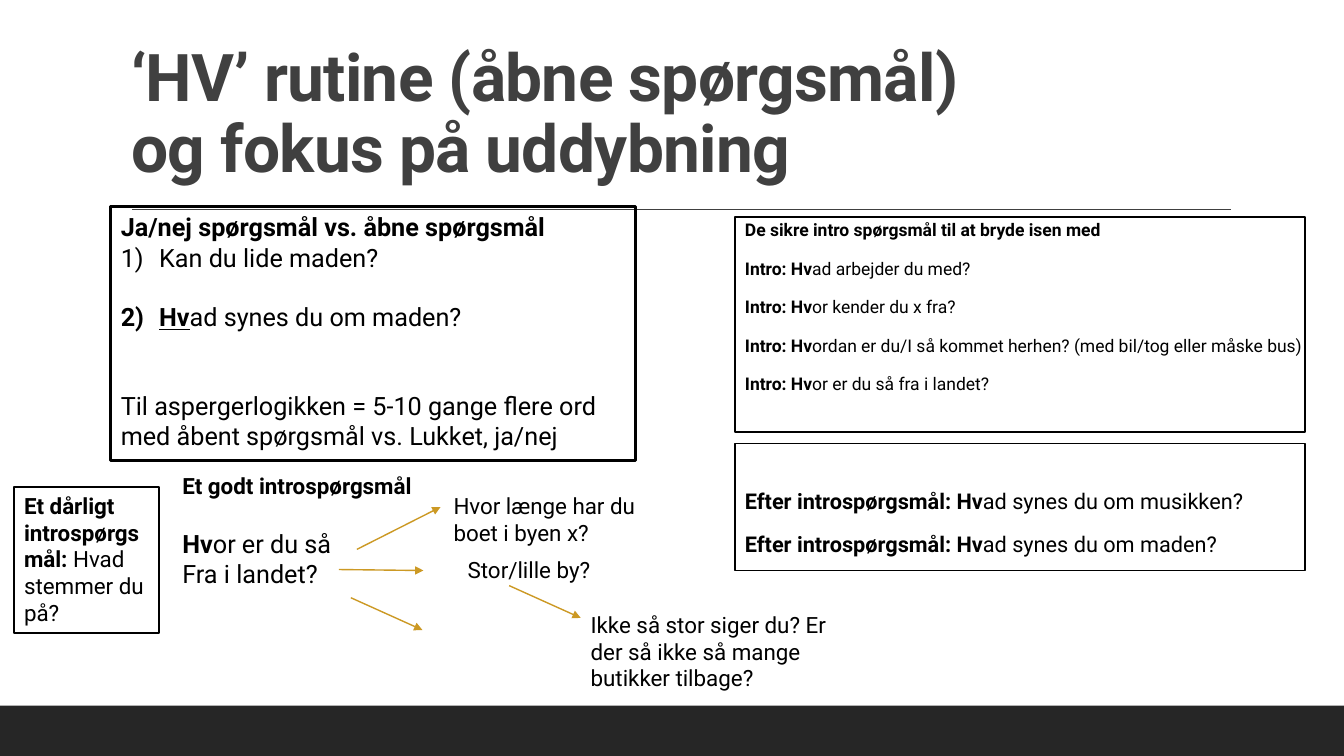
from lxml import etree
from pptx import Presentation
from pptx.dml.color import RGBColor
from pptx.enum import shapes, text
from pptx.oxml.ns import qn
from pptx.util import Inches, Pt

FONT = "Roboto"
BLACK = RGBColor(0, 0, 0)
WHITE = RGBColor(255, 255, 255)
GREY = RGBColor(0x40, 0x40, 0x40)
DARK = RGBColor(0x26, 0x26, 0x26)
GOLD = RGBColor(0xCC, 0x99, 0x24)

# Content: a paragraph is (bold text, plain text) or (bold, plain, own format)
TITLE = ["‘HV’ rutine (åbne spørgsmål)", "og fokus på uddybning"]
OPEN_QUESTIONS = [
    ("Ja/nej spørgsmål vs. åbne spørgsmål", ""),
    ("", "Kan du lide maden?", dict(number=True)),
    ("Hv", "ad synes du om maden?", dict(number=True, before=21, underline=True)),
    ("", "Til aspergerlogikken = 5-10 gange flere ord "
         "med åbent spørgsmål vs. Lukket, ja/nej", dict(before=42)),
]
INTRO = [("De sikre intro spørgsmål til at bryde isen med", "")] + [
    ("Intro: Hv", rest) for rest in (
        "ad arbejder du med?",
        "or kender du x fra?",
        "ordan er du/I så kommet herhen? (med bil/tog eller måske bus)",
        "or er du så fra i landet?")]
AFTER_INTRO = [("Efter introspørgsmål: Hv", f"ad synes du om {topic}?")
               for topic in ("musikken", "maden")]
GOOD = [("Et godt introspørgsmål", "", dict(size=16)),
        ("Hv", "or er du så", dict(before=21)),
        ("", "Fra i landet?")]
BAD = [("Et dårligt introspørgsmål: ", "Hvad stemmer du på?")]

# Place, paragraphs, outline width, fill, format
SPACED = dict(spacing=0.9, before=12, after=2)
BOXES = [
    ((7.29, 2.15, 5.65, 2.14), INTRO, 1.25, WHITE, dict(size=12.5, right=0, **SPACED)),
    ((1.1, 2.05, 5.2, 2.52), OPEN_QUESTIONS, 2.25, None, dict(size=18)),
    ((7.29, 4.4, 5.65, 1.26), AFTER_INTRO, 1.25, WHITE,
     dict(size=15.5, right=0, top=0.47, **SPACED)),
    ((0.14, 4.83, 1.44, 1.45), BAD, 1.25, WHITE, dict(size=16)),
]
LABELS = [
    ((1.71, 4.63, 4.82, 2.22), GOOD, 18),
    ((4.4, 4.83, 2.01, 0.64), [("", "Hvor længe har du boet i byen x?")], 16),
    ((4.54, 5.47, 2.01, 0.37), [("", "Stor/lille by?")], 16),
    ((5.76, 6.01, 2.66, 0.91),
     [("", "Ikke så stor siger du? Er der så ikke så mange butikker tilbage?")], 16),
]
ARROWS = [(3.54, 5.45, 4.37, 5.03), (3.36, 5.65, 4.2, 5.66),
          (3.48, 5.93, 4.19, 6.25), (5.05, 5.81, 5.76, 6.13)]


def add_run(p, words, size, color=BLACK, bold=False, underline=False):
    r = p.add_run()
    r.text = words
    f = r.font
    f.name, f.size, f.bold, f.color.rgb = FONT, Pt(size), bold, color
    if underline:
        f.underline = True
    return r


def write(tf, paragraphs, right=0.1, top=0.05, **shared):
    tf.word_wrap = True
    tf.vertical_anchor = text.MSO_ANCHOR.TOP
    tf.margin_right, tf.margin_top = Inches(right), Inches(top)
    for i, (strong, plain, *own) in enumerate(paragraphs):
        style = {**shared, **(own[0] if own else {})}
        p = tf.add_paragraph() if i else tf.paragraphs[0]
        p.alignment = text.PP_ALIGN.LEFT
        p.line_spacing = style.get("spacing", 1.0)
        p.space_before = Pt(style.get("before", 0))
        p.space_after = Pt(style.get("after", 0))
        if style.get("number"):
            pPr = p._p.get_or_add_pPr()
            pPr.set("marL", str(Inches(0.38)))
            pPr.set("indent", str(-Inches(0.38)))
            etree.SubElement(pPr, qn("a:buFont"), typeface="+mj-lt")
            etree.SubElement(pPr, qn("a:buAutoNum"), type="arabicParenR")
        if strong:
            add_run(p, strong, style["size"], bold=True,
                    underline=style.get("underline", False))
        if plain:
            add_run(p, plain, style["size"])


def add_box(s, place, fill=None, line=None):
    sp = s.shapes.add_shape(shapes.MSO_SHAPE.RECTANGLE, *map(Inches, place))
    sp.shadow.inherit = False
    if fill is None:
        sp.fill.background()
    else:
        sp.fill.solid()
        sp.fill.fore_color.rgb = fill
    if line is None:
        sp.line.fill.background()
    else:
        sp.line.color.rgb = BLACK
        sp.line.width = Pt(line)
    return sp


def add_line(s, ends, color, arrow=False):
    c = s.shapes.add_connector(shapes.MSO_CONNECTOR.STRAIGHT, *map(Inches, ends))
    c.line.color.rgb = color
    c.line.width = Pt(1)
    if arrow:
        etree.SubElement(c.line._get_or_add_ln(), qn("a:tailEnd"), type="triangle")
    etree.SubElement(c._element.spPr, qn("a:effectLst"))


def main():
    prs = Presentation()
    prs.slide_width, prs.slide_height = Inches(13.33), Inches(7.5)
    s = prs.slides.add_slide(prs.slide_layouts[5])

    # Footer band and title rule
    add_box(s, (0, 7, 13.33, 0.5), fill=DARK)
    add_line(s, (1.31, 2.08, 12.21, 2.08), GREY)

    # Title
    title = s.shapes.title
    title.left, title.top, title.width, title.height = map(Inches, (1.2, 0.31, 11, 1.59))
    tf = title.text_frame
    tf.word_wrap = True
    tf.auto_size = text.MSO_AUTO_SIZE.NONE
    tf.vertical_anchor = text.MSO_ANCHOR.BOTTOM
    p = tf.paragraphs[0]
    p.alignment = text.PP_ALIGN.LEFT
    p.line_spacing = 0.9
    for i, words in enumerate(TITLE):
        if i:
            p.add_line_break()
        r = add_run(p, words, 47, GREY, bold=True)
        r.font._element.set("spc", "-50")

    # Framed boxes
    for place, paragraphs, line, fill, style in BOXES:
        write(add_box(s, place, fill, line).text_frame, paragraphs, **style)

    # Follow-up questions and their arrows
    for place, paragraphs, size in LABELS:
        write(s.shapes.add_textbox(*map(Inches, place)).text_frame, paragraphs, size=size)
    for ends in ARROWS:
        add_line(s, ends, GOLD, arrow=True)

    prs.save("out.pptx")


if __name__ == "__main__":
    main()
